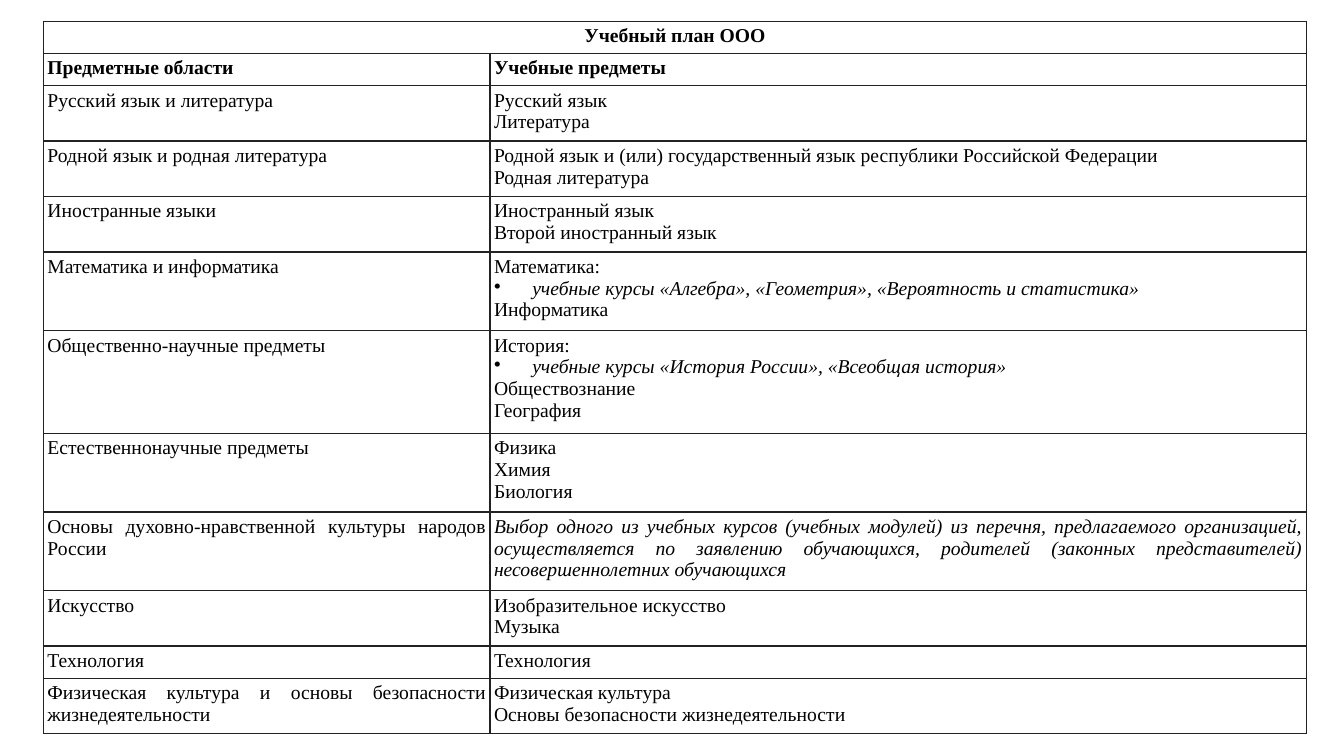
import pptx
import pptx.dml.color
import pptx.enum.text
import pptx.oxml
import pptx.oxml.ns
import pptx.util
from dataclasses import dataclass
from pptx.util import Inches


@dataclass(frozen=True)
class Theme:
    font: str = "Times New Roman"
    size: float = 14
    text: str = "000000"
    border: str = "222222"
    border_width: float = 1


THEME = Theme()
ALIGN = pptx.enum.text.PP_ALIGN
MARGIN = Inches(0.04)
COLUMN_WIDTHS = (4.43, 8.1)
HEIGHT_BY_LINES = {1: 0.32, 2: 0.55, 3: 0.78, 4: 1.02}

PLAIN, BOLD, ITALIC, BULLET = "plain", "bold", "italic", "bullet"
HEADING = "Учебный план ООО"
COLUMN_NAMES = ("Предметные области", "Учебные предметы ")
SUBJECT_AREAS = [
    ("Русский язык и литература", 2, ["Русский язык", "Литература"]),
    ("Родной язык и родная литература", 2, [
        "Родной язык и (или) государственный язык республики Российской Федерации",
        "Родная литература"]),
    ("Иностранные языки", 2, ["Иностранный язык", "Второй иностранный язык"]),
    ("Математика и информатика", 3, [
        "Математика:",
        ("учебные курсы «Алгебра», «Геометрия», «Вероятность и статистика»", BULLET),
        "Информатика"]),
    ("Общественно-научные предметы", 4, [
        "История:",
        ("учебные курсы «История России», «Всеобщая история»", BULLET),
        "Обществознание", "География"]),
    ("Естественнонаучные предметы", 3, ["Физика", "Химия", "Биология"]),
    ("Основы духовно-нравственной культуры народов России", 3, [
        ("Выбор одного из учебных курсов (учебных модулей) из перечня, "
         "предлагаемого организацией, осуществляется по заявлению обучающихся, "
         "родителей (законных представителей) несовершеннолетних обучающихся", ITALIC)]),
    ("Искусство", 2, ["Изобразительное искусство", "Музыка"]),
    ("Технология", 1, ["Технология"]),
    ("Физическая культура и основы безопасности жизнедеятельности", 2, [
        "Физическая культура", "Основы безопасности жизнедеятельности"]),
]


def apply_format(target, values):
    for name, value in values.items():
        setattr(target, name, value)


def add_bullet(para):
    properties = para._p.get_or_add_pPr()
    properties.set("marL", str(Inches(0.38)))
    properties.set("indent", str(Inches(-0.38)))
    namespace = pptx.oxml.ns.nsdecls("a")
    for markup in (
        f'<a:buChar {namespace} char="•"/>',
        f'<a:tabLst {namespace}><a:tab pos="{Inches(0.5)}" algn="l"/></a:tabLst>',
    ):
        properties.append(pptx.oxml.parse_xml(markup))


def add_borders(cell):
    properties = cell._tc.get_or_add_tcPr()
    namespace = pptx.oxml.ns.nsdecls("a")
    width = pptx.util.Pt(THEME.border_width)
    for position, side in enumerate(("lnL", "lnR", "lnT", "lnB")):
        properties.insert(position, pptx.oxml.parse_xml(
            f'<a:{side} {namespace} w="{width}"><a:solidFill>'
            f'<a:srgbClr val="{THEME.border}"/></a:solidFill></a:{side}>'))


def write_paragraph(para, text, style, alignment):
    para.alignment = alignment
    if style == BULLET:
        add_bullet(para)
    span = para.add_run()
    span.text = text
    apply_format(span.font, {
        "name": THEME.font,
        "size": pptx.util.Pt(THEME.size),
        "bold": style == BOLD,
        "italic": style in (ITALIC, BULLET),
    })
    span.font.color.rgb = pptx.dml.color.RGBColor.from_string(THEME.text)


def fill_cell(cell, items, style=PLAIN, alignment=ALIGN.JUSTIFY):
    frame = cell.text_frame
    for index, item in enumerate(items):
        text, item_style = (item, style) if isinstance(item, str) else item
        para = frame.add_paragraph() if index else frame.paragraphs[0]
        write_paragraph(para, text, item_style, alignment)


def add_plan_table(page):
    line_counts = [1, 1] + [lines for _, lines, _ in SUBJECT_AREAS]
    heights = [HEIGHT_BY_LINES[lines] for lines in line_counts]
    table = page.shapes.add_table(
        len(heights), len(COLUMN_WIDTHS), Inches(0.43), Inches(0.21),
        Inches(sum(COLUMN_WIDTHS)), Inches(sum(heights))).table
    apply_format(table, {"first_row": False, "horz_banding": False})
    for column, width in zip(table.columns, COLUMN_WIDTHS):
        column.width = Inches(width)
    for row, height in zip(table.rows, heights):
        row.height = Inches(height)
    for cell in table.iter_cells():
        apply_format(cell, {f"margin_{side}": MARGIN
                            for side in ("left", "right", "top", "bottom")})
        cell.fill.background()
        add_borders(cell)
    return table


def fill_plan_table(table):
    table.cell(0, 0).merge(table.cell(0, 1))
    fill_cell(table.cell(0, 0), [HEADING], BOLD, ALIGN.CENTER)
    for column, name in enumerate(COLUMN_NAMES):
        fill_cell(table.cell(1, column), [name], BOLD)
    for row, (area, _, subjects) in enumerate(SUBJECT_AREAS, start=2):
        fill_cell(table.cell(row, 0), [area])
        fill_cell(table.cell(row, 1), subjects)


def main():
    deck = pptx.Presentation()
    apply_format(deck, {"slide_width": Inches(13.33), "slide_height": Inches(7.5)})
    page = deck.slides.add_slide(deck.slide_layouts[6])
    fill_plan_table(add_plan_table(page))
    deck.save("out.pptx")


if __name__ == "__main__":
    main()
